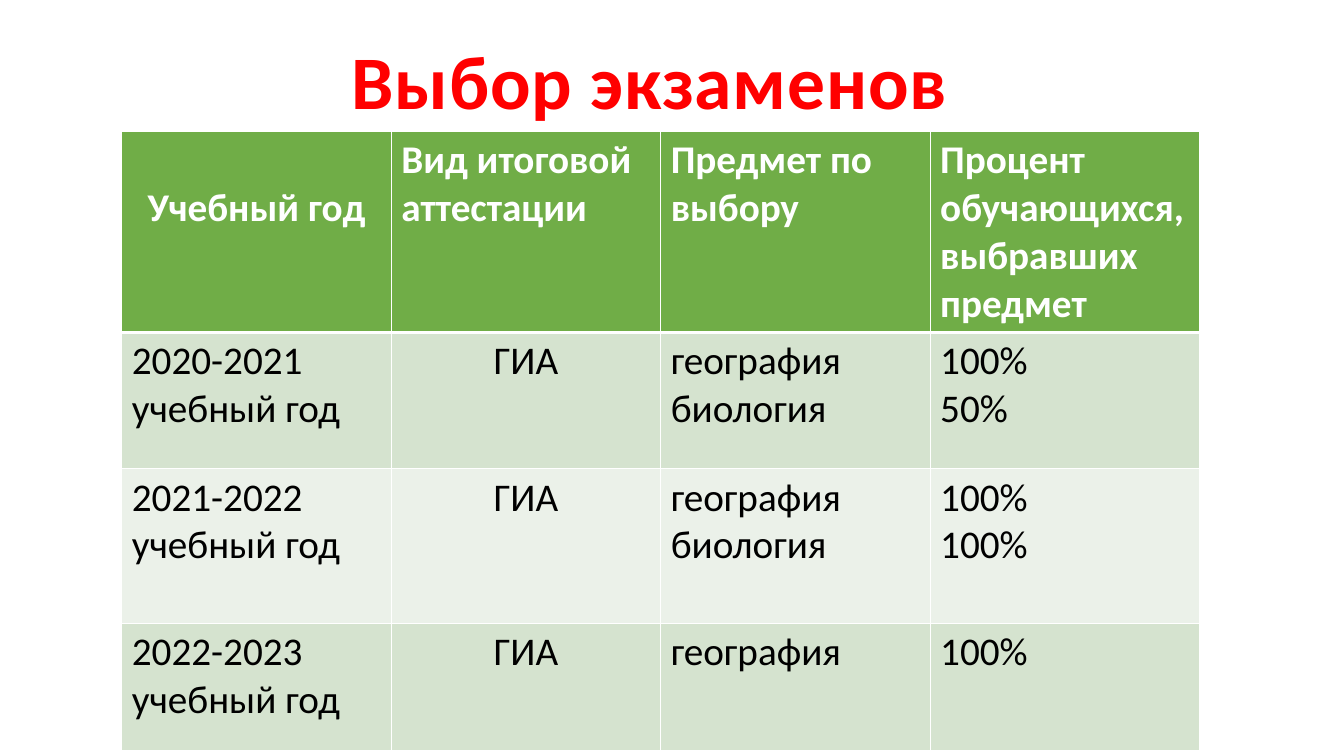
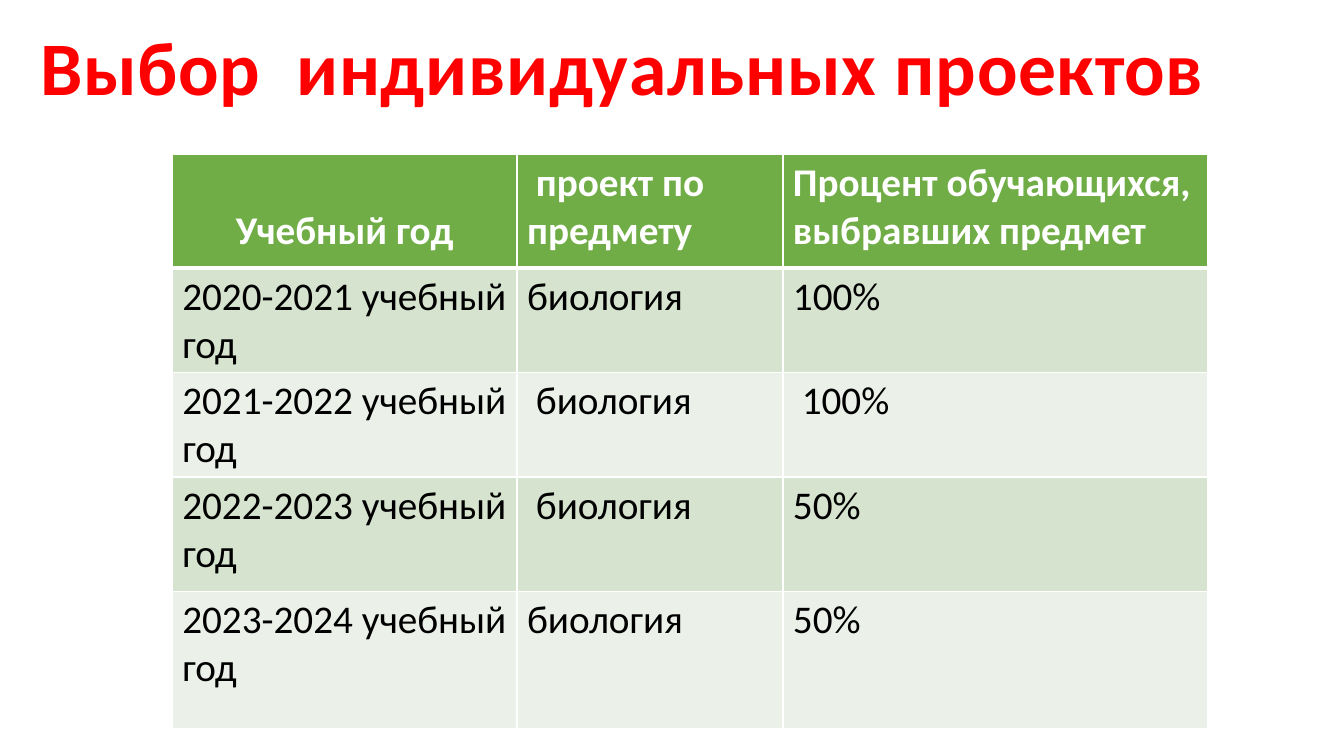
from lxml.etree import SubElement
from pptx import Presentation
from pptx.dml.color import RGBColor
from pptx.enum.text import MSO_AUTO_SIZE, PP_ALIGN
from pptx.oxml.ns import qn
from pptx.util import Cm, Pt

RED = RGBColor(0xFF, 0x00, 0x00)
WHITE = RGBColor(0xFF, 0xFF, 0xFF)
BLACK = RGBColor(0x00, 0x00, 0x00)
GREEN = RGBColor(0x70, 0xAD, 0x47)
BANDS = [RGBColor(0xD5, 0xE3, 0xCF), RGBColor(0xEB, 0xF1, 0xE9)]

YEAR = "Учебный год"
SHARE = "Процент обучающихся, выбравших предмет"
EXAM = "ГИА"
CENTERED = (YEAR, EXAM)
YEAR_TOP = 1.34

SLIDES = [
    dict(
        title="Выбор экзаменов",
        title_box=(8.3, 0.74, 16.15, 2.57),
        align=PP_ALIGN.CENTER,
        origin=(3.07, 3.3),
        cols=[6.79] * 4,
        heights=[5.08, 3.43, 3.9, 3.2],
        rows=[
            [YEAR, "Вид итоговой аттестации", "Предмет по выбору", SHARE],
            ["2020-2021 учебный год", EXAM, "география\nбиология", "100%\n50%"],
            ["2021-2022 учебный год", EXAM, "география\nбиология", "100%\n100%"],
            ["2022-2023 учебный год", EXAM, "география", "100%"],
        ],
    ),
    dict(
        title="Выбор  индивидуальных проектов",
        title_box=(0.76, 0.38, 30.18, 2.57),
        align=PP_ALIGN.LEFT,
        origin=(4.34, 3.89),
        cols=[8.69, 6.7, 10.69],
        heights=[2.87, 2.63, 2.63, 2.88, 3.45],
        rows=[
            [YEAR, " проект по предмету", SHARE],
            ["2020-2021 учебный год", "биология", "100%"],
            ["2021-2022 учебный год", " биология", " 100%"],
            ["2022-2023 учебный год", " биология", "50%"],
            ["2023-2024 учебный год", "биология", "50%"],
        ],
    ),
]


def write(tf, text, size=28, color=BLACK, bold=False, align=PP_ALIGN.LEFT, spacing=None):
    for i, line in enumerate(text.split("\n")):
        p = tf.add_paragraph() if i else tf.paragraphs[0]
        p.alignment = align
        r = p.add_run()
        r.text = line
        r.font.name = "Calibri"
        r.font.size = Pt(size)
        r.font.bold = bold
        r.font.color.rgb = color
        if spacing:
            r.font._element.set("spc", str(spacing))


def set_borders(cell, top=1, bottom=1):
    tc_pr = cell._tc.get_or_add_tcPr()
    for side, width in (("L", 1), ("R", 1), ("T", top), ("B", bottom)):
        ln = SubElement(tc_pr, qn(f"a:ln{side}"), w=str(Pt(width)))
        fill = SubElement(ln, qn("a:solidFill"))
        SubElement(fill, qn("a:srgbClr"), val=str(WHITE))


def add_title(s, text, box, align):
    tf = s.shapes.add_textbox(*map(Cm, box)).text_frame
    tf.word_wrap = False
    tf.auto_size = MSO_AUTO_SIZE.SHAPE_TO_FIT_TEXT
    write(tf, text, size=54, color=RED, bold=True, align=align, spacing=50)


def add_grid(s, origin, cols, heights, rows):
    size = Cm(sum(cols)), Cm(sum(heights))
    table = s.shapes.add_table(len(rows), len(cols), *map(Cm, origin), *size).table
    for col, width in zip(table.columns, cols):
        col.width = Cm(width)
    for i, (row, height, texts) in enumerate(zip(table.rows, heights, rows)):
        row.height = Cm(height)
        header = i == 0
        for cell, text in zip(row.cells, texts):
            set_borders(cell, top=3 if i == 1 else 1, bottom=3 if header else 1)
            cell.fill.solid()
            cell.fill.fore_color.rgb = GREEN if header else BANDS[(i - 1) % 2]
            if text == YEAR:
                cell.margin_top = Cm(YEAR_TOP)
            write(
                cell.text_frame,
                text,
                color=WHITE if header else BLACK,
                bold=header,
                align=PP_ALIGN.CENTER if text in CENTERED else PP_ALIGN.LEFT,
            )


def main():
    prs = Presentation()
    prs.slide_width, prs.slide_height = Cm(33.87), Cm(19.05)
    for d in SLIDES:
        s = prs.slides.add_slide(prs.slide_layouts[6])
        add_title(s, d["title"], d["title_box"], d["align"])
        add_grid(s, d["origin"], d["cols"], d["heights"], d["rows"])
    prs.save("out.pptx")


if __name__ == "__main__":
    main()
